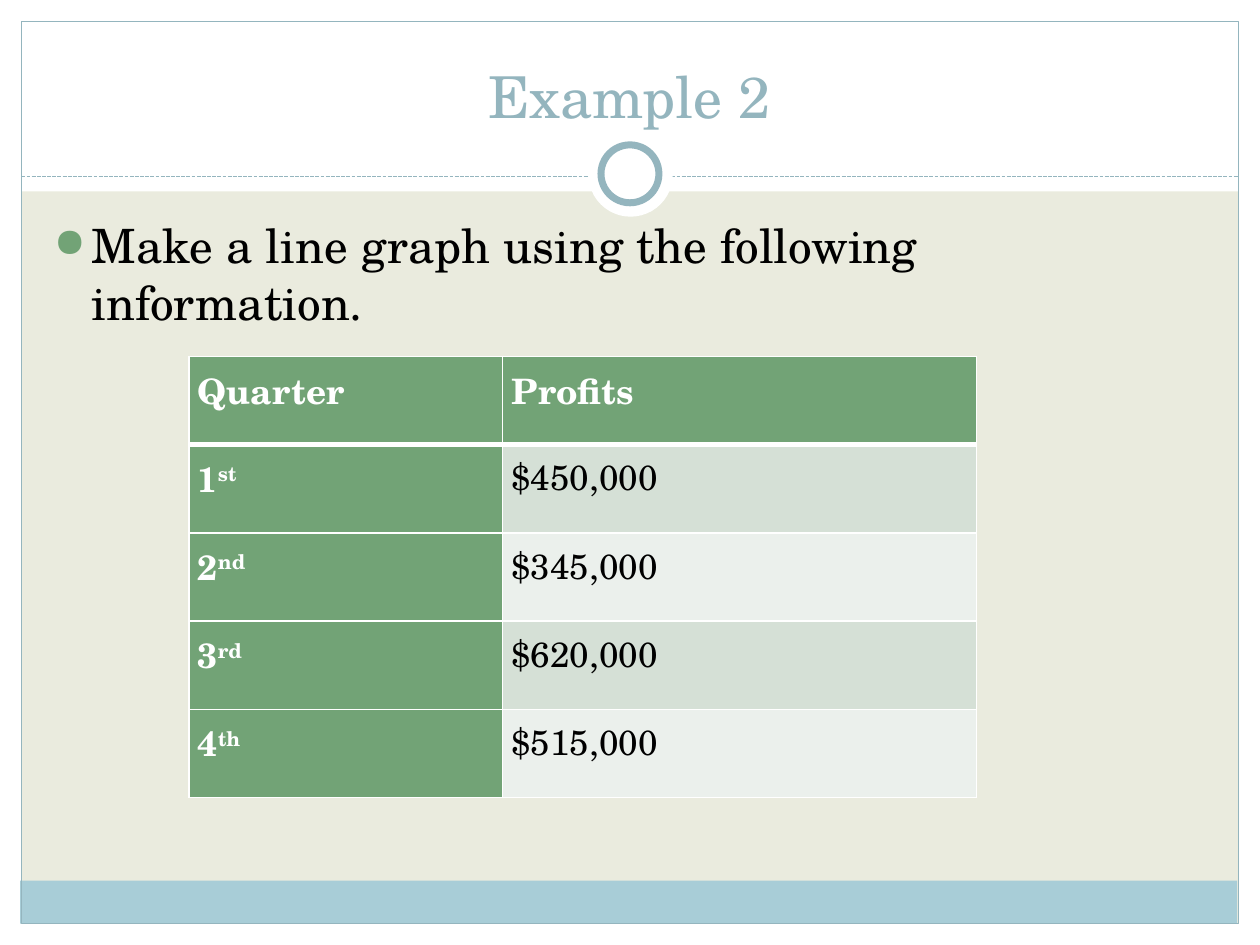
from lxml import etree
from pptx import Presentation
from pptx.dml.color import RGBColor
from pptx.enum.dml import MSO_LINE
from pptx.enum.shapes import MSO_CONNECTOR, MSO_SHAPE
from pptx.enum.text import MSO_ANCHOR, PP_ALIGN
from pptx.oxml import parse_xml
from pptx.oxml.ns import nsdecls, qn
from pptx.util import Inches, Pt

RECT, OVAL = MSO_SHAPE.RECTANGLE, MSO_SHAPE.OVAL
STRAIGHT, DASH = MSO_CONNECTOR.STRAIGHT, MSO_LINE.SQUARE_DOT
BOTTOM, CENTER = MSO_ANCHOR.BOTTOM, PP_ALIGN.CENTER
FONT = "TeX Gyre Schola"
COLORS = {
    "background": "EAEBDE",
    "white": "FFFFFF",
    "band": "A8CDD7",
    "accent": "94B5BE",
    "green": "72A376",
    "row_dark": "D5E0D6",
    "row_light": "EBF0EC",
    "black": "000000",
}


def color(name):
    return RGBColor.from_string(COLORS[name])


def add_run(paragraph, text, size, color_name, bold=False):
    run = paragraph.add_run()
    run.text = text
    run.font.name = FONT
    run.font.size = Pt(size)
    run.font.bold = bold
    run.font.color.rgb = color(color_name)
    return run


prs = Presentation()
prs.slide_width, prs.slide_height = Inches(10), Inches(7.5)
slide = prs.slides.add_slide(prs.slide_layouts[6])
slide.background.fill.solid()
slide.background.fill.fore_color.rgb = color("background")

divider = slide.shapes.add_connector(
    STRAIGHT, Inches(0.17), Inches(1.4), Inches(9.83), Inches(1.4))
divider.line.color.rgb = color("accent")
divider.line.width = Pt(0.75)
divider.line.dash_style = DASH
etree.SubElement(divider._element.spPr, qn("a:effectLst"))

decorations = [
    (RECT, 0, 7.33, 10, 0.17, "white", None),
    (RECT, 0, 0, 10, 1.52, "white", None),
    (RECT, 0, 0, 0.17, 7.5, "white", None),
    (RECT, 9.83, 0, 0.17, 7.5, "white", None),
    (RECT, 0.16, 6.99, 9.66, 0.34, "band", None),
    (RECT, 0.17, 0.17, 9.66, 7.16, None, 0.75),
    (OVAL, 4.67, 1.05, 0.67, 0.67, "white", None),
    (OVAL, 4.77, 1.15, 0.46, 0.46, "white", 4),
]
for kind, left, top, width, height, fill, outline in decorations:
    if kind == OVAL and outline is None:
        slide.shapes._spTree.append(divider._element)
    decoration = slide.shapes.add_shape(
        kind, Inches(left), Inches(top), Inches(width), Inches(height))
    decoration.shadow.inherit = False
    if fill:
        decoration.fill.solid()
        decoration.fill.fore_color.rgb = color(fill)
    else:
        decoration.fill.background()
    if outline:
        decoration.line.color.rgb = color("accent")
        decoration.line.width = Pt(outline)
    else:
        decoration.line.fill.background()

title = slide.shapes.add_textbox(
    Inches(0.33), Inches(0.25), Inches(9.33), Inches(0.83)).text_frame
title.word_wrap = True
title.vertical_anchor = BOTTOM
title.paragraphs[0].alignment = CENTER
add_run(title.paragraphs[0], "Example 2", 33, "accent")

task = slide.shapes.add_textbox(
    Inches(0.33), Inches(1.67), Inches(9.3), Inches(5)).text_frame
task.word_wrap = True
instruction = task.paragraphs[0]
add_run(instruction, "Make a line graph using the following information.", 27, "black")
bullet = instruction._p.get_or_add_pPr()
bullet.set("marL", str(Inches(0.3)))
bullet.set("indent", str(-Inches(0.3)))
for xml in (
    f'<a:buClr {nsdecls("a")}><a:srgbClr val="{COLORS["green"]}"/></a:buClr>',
    f'<a:buSzPct {nsdecls("a")} val="85000"/>',
    f'<a:buChar {nsdecls("a")} char="●"/>',
):
    bullet.append(parse_xml(xml))

rows = [
    ("Quarter", "", "Profits"),
    ("1", "st", "$450,000"),
    ("2", "nd", "$345,000"),
    ("3", "rd", "$620,000"),
    ("4", "th", "$515,000"),
]
profits = slide.shapes.add_table(
    len(rows), 2, Inches(1.5), Inches(2.83), Inches(6.25), Inches(3.5)).table
profits.columns[0].width, profits.columns[1].width = Inches(2.49), Inches(3.76)

for r, (quarter, suffix, profit) in enumerate(rows):
    profits.rows[r].height = Inches(0.7)
    for c, text in enumerate((quarter, profit)):
        cell = profits.cell(r, c)
        heading = r == 0 or c == 0
        cell.margin_left = cell.margin_right = Inches(0.07)
        cell.margin_top = cell.margin_bottom = Inches(0.05)
        cell.fill.solid()
        cell.fill.fore_color.rgb = color(
            "green" if heading else "row_dark" if r % 2 else "row_light")
        paragraph = cell.text_frame.paragraphs[0]
        text_color = "white" if heading else "black"
        add_run(paragraph, text, 20, text_color, heading)
        if c == 0 and suffix:
            ordinal = add_run(paragraph, suffix, 20, text_color, True)
            ordinal.font._element.set("baseline", "30000")
        for i, side in enumerate(("lnL", "lnR", "lnT", "lnB")):
            thick = (r, side) in ((0, "lnB"), (1, "lnT"))
            cell._tc.get_or_add_tcPr().insert(i, parse_xml(
                f'<a:{side} {nsdecls("a")} w="{Pt(3 if thick else 1)}"><a:solidFill>'
                f'<a:srgbClr val="{COLORS["white"]}"/></a:solidFill></a:{side}>'))

prs.save("out.pptx")
